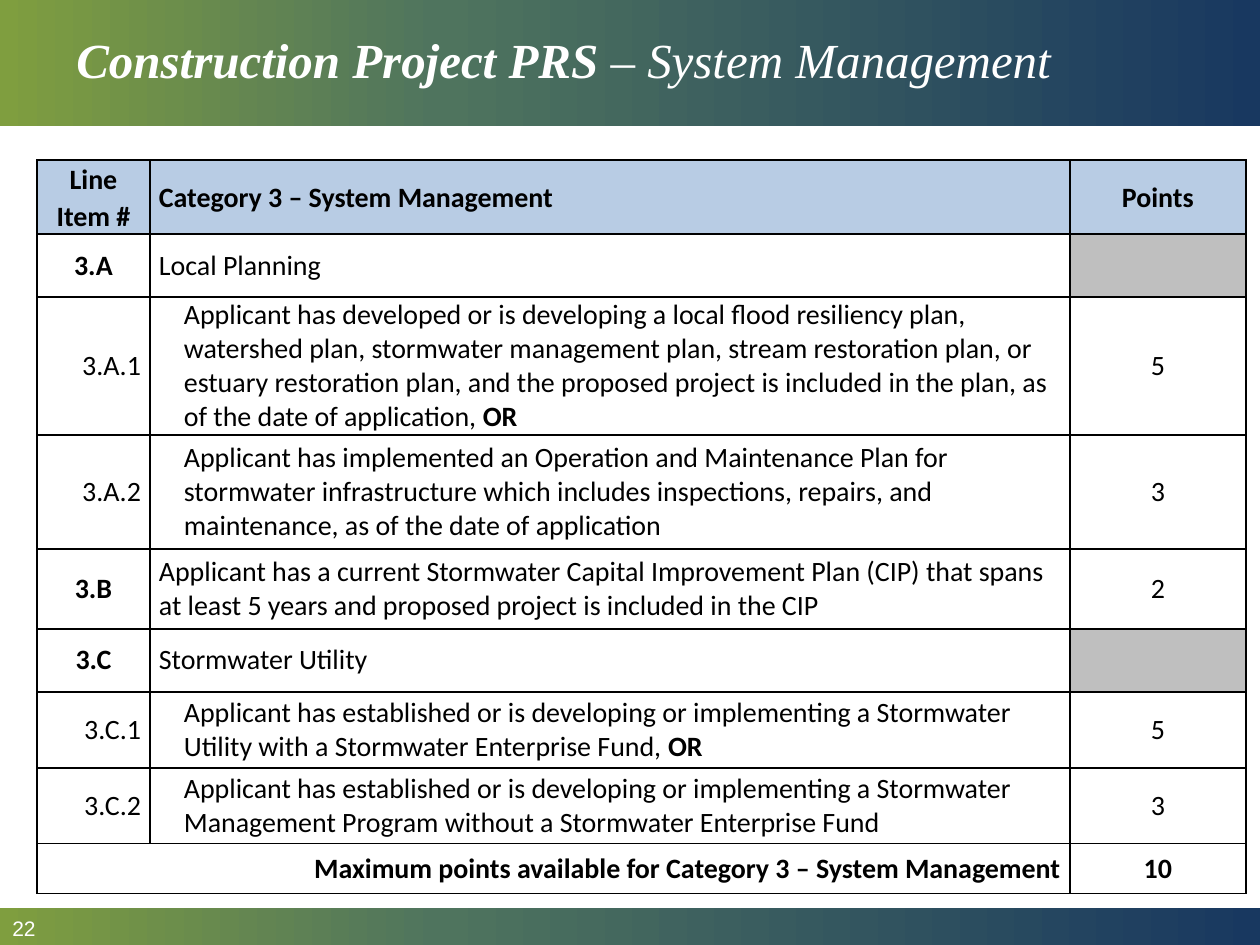
import dataclasses
import copy

import lxml.etree
import pptx
import pptx.dml.color
import pptx.enum.shapes
import pptx.enum.text
import pptx.oxml.ns
import pptx.util

EMU_PER_PX = 914400 // 126
LEFT, CENTER, RIGHT = (
    pptx.enum.text.PP_ALIGN.LEFT,
    pptx.enum.text.PP_ALIGN.CENTER,
    pptx.enum.text.PP_ALIGN.RIGHT,
)


@dataclasses.dataclass(frozen=True)
class Theme:
    band_stops: tuple = ((0, "7F9E3F"), (0.35, "4F745E"), (1, "183860"))
    light: str = "FFFFFF"
    ink: str = "000000"
    header: str = "B8CCE4"
    unused: str = "BFBFBF"
    title_font: str = "Times New Roman"
    table_font: str = "Calibri"
    number_font: str = "Arial"
    title_size: int = 28
    table_size: int = 16
    number_size: int = 12
    border_width: int = 1


THEME = Theme()
COLUMN_WIDTHS = (113, 920, 176)
ROW_HEIGHTS = (74, 63, 138, 114, 80, 63, 76, 76, 50)
HEADINGS = ("Line Item #", "Category 3 – System Management", "Points")
# Line item, description, closing bold word, points (None for a group heading)
ITEMS = (
    ("3.A", "Local Planning", "", None),
    ("3.A.1", "Applicant has developed or is developing a local flood resiliency plan, "
     "watershed plan, stormwater management plan, stream restoration plan, or estuary "
     "restoration plan, and the proposed project is included in the plan, as of the "
     "date of application, ", "OR", "5"),
    ("3.A.2", "Applicant has implemented an Operation and Maintenance Plan for stormwater "
     "infrastructure which includes inspections, repairs, and maintenance, as of the "
     "date of application", "", "3"),
    ("3.B", "Applicant has a current Stormwater Capital Improvement Plan (CIP) that spans "
     "at least 5 years and proposed project is included in the CIP", "", "2"),
    ("3.C", "Stormwater Utility", "", None),
    ("3.C.1", "Applicant has established or is developing or implementing a Stormwater "
     "Utility with a Stormwater Enterprise Fund, ", "OR", "5"),
    ("3.C.2", "Applicant has established or is developing or implementing a Stormwater "
     "Management Program without a Stormwater Enterprise Fund", "", "3"),
)


def px(length):
    return pptx.util.Emu(length * EMU_PER_PX)


def rgb(value):
    return pptx.dml.color.RGBColor.from_string(value)


def style_font(font, name, size, color):
    font.name = name
    font.size = pptx.util.Pt(size)
    font.color.rgb = rgb(color)


def add_span(para, text, bold=None):
    span = para.add_run()
    span.text = text
    span.font.bold = bold


def add_band(page, top, height):
    """Add a full-width bar with the three-colour gradient."""
    band = page.shapes.add_shape(
        pptx.enum.shapes.MSO_SHAPE.RECTANGLE, 0, px(top), px(1260), px(height))
    band.shadow.inherit = False
    band.line.fill.background()
    band.fill.gradient()
    band.fill.gradient_angle = 0
    stops = band.element.spPr.find(".//" + pptx.oxml.ns.qn("a:gsLst"))
    stops.insert(1, copy.deepcopy(stops[0]))
    for stop, (position, color) in zip(band.fill.gradient_stops, THEME.band_stops):
        stop.position = position
        stop.color.rgb = rgb(color)


def add_text_box(page, left, top, width, height):
    """Add a vertically centred text box and return its paragraph."""
    box = page.shapes.add_textbox(px(left), px(top), px(width), px(height))
    box.text_frame.word_wrap = True
    box.text_frame.vertical_anchor = pptx.enum.text.MSO_ANCHOR.MIDDLE
    return box.text_frame.paragraphs[0]


def add_title(page):
    para = add_text_box(page, 64, 0, 1149, 126)
    para.line_spacing = 0.9
    style_font(para.font, THEME.title_font, THEME.title_size, THEME.light)
    para.font.italic = True
    add_span(para, "Construction Project PRS ", True)
    add_span(para, "– System Management", False)


def add_page_number(page):
    para = add_text_box(page, 0, 910, 241, 37)
    style_font(para.font, THEME.number_font, THEME.number_size, THEME.light)
    add_span(para, "22")


def style_cell(cell, fill=None):
    cell.margin_left = cell.margin_right = px(9)
    cell.margin_top = cell.margin_bottom = 0
    cell.vertical_anchor = pptx.enum.text.MSO_ANCHOR.MIDDLE
    properties = cell._tc.get_or_add_tcPr()
    for side in ("a:lnL", "a:lnR", "a:lnT", "a:lnB"):
        line = lxml.etree.SubElement(properties, pptx.oxml.ns.qn(side))
        line.set("w", str(pptx.util.Pt(THEME.border_width)))
        solid = lxml.etree.SubElement(line, pptx.oxml.ns.qn("a:solidFill"))
        color = lxml.etree.SubElement(solid, pptx.oxml.ns.qn("a:srgbClr"))
        color.set("val", THEME.ink)
    if fill:
        cell.fill.solid()
        cell.fill.fore_color.rgb = rgb(fill)
    else:
        cell.fill.background()


def write_cell(cell, text, align=LEFT, bold=False, ending=""):
    """Fill a cell's paragraph, with an optional bold ending, and return it."""
    para = cell.text_frame.paragraphs[0]
    para.alignment = align
    style_font(para.font, THEME.table_font, THEME.table_size, THEME.ink)
    add_span(para, text, bold)
    if ending:
        add_span(para, ending, True)
    return para


def write_item(cells, item):
    number, description, ending, points = item
    is_subitem = number.count(".") == 2
    write_cell(cells[0], number, RIGHT if is_subitem else CENTER, not is_subitem)
    para = write_cell(cells[1], description, ending=ending)
    if is_subitem:
        para._p.get_or_add_pPr().set("marL", str(px(25)))
    if points:
        write_cell(cells[2], points, CENTER)


def add_score_table(page):
    table = page.shapes.add_table(
        len(ROW_HEIGHTS), len(COLUMN_WIDTHS), px(37), px(160),
        px(sum(COLUMN_WIDTHS)), px(sum(ROW_HEIGHTS))).table
    table.first_row = table.horz_banding = False
    for column, width in zip(table.columns, COLUMN_WIDTHS):
        column.width = px(width)
    for row, height in zip(table.rows, ROW_HEIGHTS):
        row.height = px(height)
    rows = [list(row.cells) for row in table.rows]

    for cell, heading, align in zip(rows[0], HEADINGS, (CENTER, LEFT, CENTER)):
        style_cell(cell, THEME.header)
        write_cell(cell, heading, align, True).line_spacing = 1.07
    for cells, item in zip(rows[1:], ITEMS):
        for cell in cells[:2]:
            style_cell(cell)
        style_cell(cells[2], None if item[3] else THEME.unused)
        write_item(cells, item)

    total = rows[-1]
    total[0].merge(total[1])
    for cell in total:
        style_cell(cell)
    write_cell(total[0], "Maximum points available for Category 3 – System Management",
               RIGHT, True)
    write_cell(total[2], "10", CENTER, True)


def main():
    deck = pptx.Presentation()
    deck.slide_width, deck.slide_height = pptx.util.Inches(10), pptx.util.Inches(7.5)
    page = deck.slides.add_slide(deck.slide_layouts[6])
    add_band(page, 0, 126)
    add_band(page, 908, 37)
    add_title(page)
    add_score_table(page)
    add_page_number(page)
    deck.save("out.pptx")


if __name__ == "__main__":
    main()
